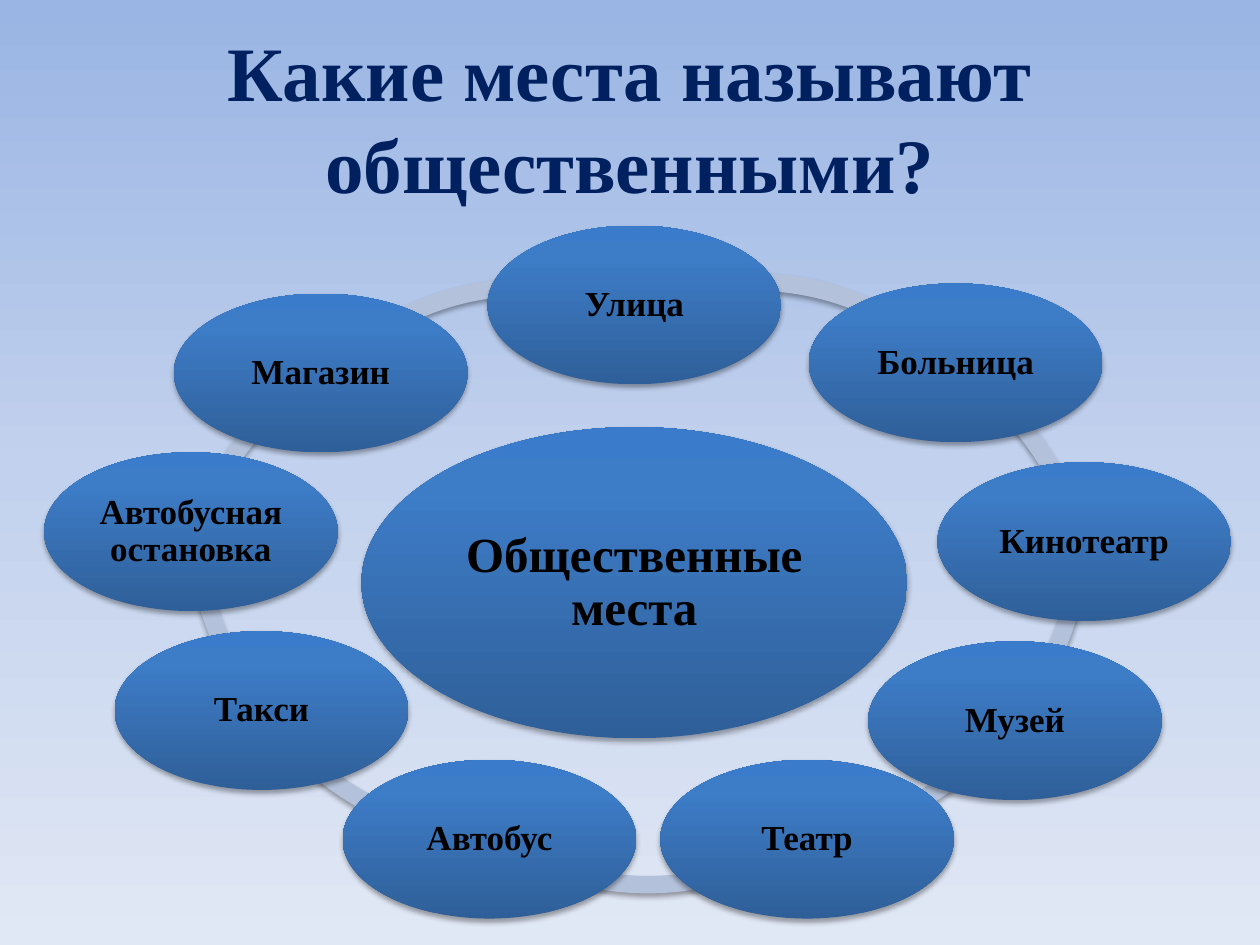
from lxml import etree
from pptx import Presentation
from pptx.dml.color import RGBColor
from pptx.enum.shapes import MSO_SHAPE
from pptx.enum.text import MSO_ANCHOR, PP_ALIGN
from pptx.oxml.ns import qn
from pptx.util import Pt

OVAL, BLOCK_ARC = MSO_SHAPE.OVAL, MSO_SHAPE.BLOCK_ARC
CENTER, MIDDLE = PP_ALIGN.CENTER, MSO_ANCHOR.MIDDLE
OVAL_STOPS = [(0, "2F5F99"), (80, "3D7CC7"), (100, "3A7CCB")]
PAGE_STOPS = [(0, "9AB5E4"), (50, "C2D1ED"), (100, "E1E8F5")]


def set_gradient(fill, element, stops, angle):
    """Give fill, held by element, stops of (percent, colour); angle is clockwise."""
    fill.gradient()
    gradient = next(element.iter(qn("a:gradFill")))
    stop_list = gradient.find(qn("a:gsLst"))
    for old_stop in list(stop_list):
        stop_list.remove(old_stop)
    for percent, color in stops:
        stop = etree.SubElement(stop_list, qn("a:gs"), pos=str(percent * 1000))
        etree.SubElement(stop, qn("a:srgbClr"), val=color)
    gradient.find(qn("a:lin")).set("ang", str(angle * 60000))


def write_text(shape, text, size, color, line_spacing=1.0, inset=None):
    frame = shape.text_frame
    frame.word_wrap = True
    frame.vertical_anchor = MIDDLE
    if inset is not None:
        frame.margin_left = frame.margin_right = Pt(inset)
        frame.margin_top = frame.margin_bottom = Pt(inset)
    para = frame.paragraphs[0]
    para.alignment = CENTER
    para.line_spacing = line_spacing
    span = para.add_run()
    span.text = text
    span.font.name = "Times New Roman"
    span.font.size = Pt(size)
    span.font.bold = True
    span.font.color.rgb = RGBColor.from_string(color)


deck = Presentation()
deck.slide_width, deck.slide_height = Pt(720), Pt(540)
page = deck.slides.add_slide(deck.slide_layouts[6])
set_gradient(page.background.fill, page._element, PAGE_STOPS, 90)

title = page.shapes.add_textbox(Pt(36), Pt(21.6), Pt(648), Pt(90))
write_text(title, "Какие места называют общественными?", 44, "002060")

# Ring segments between neighbouring places: left, top, start and end in degrees
ARC_SIZE = 322.6
arcs = [
    (139.7, 159.1, 222.32, 293.02),
    (99.4, 190.1, 197.51, 240.67),
    (107.3, 139.7, 138.6, 178.91),
    (121.7, 159.1, 91.36, 147.6),
    (208.8, 187.9, 55.19, 124.81),
    (288, 159.8, 34.69, 85.82),
    (299.5, 145.4, 1.1, 41.41),
    (303.1, 182.9, 300.83, 347.5),
    (270, 156.2, 244.5, 316.28),
]
diagram = []
for left, top, start, end in arcs:
    arc = page.shapes.add_shape(BLOCK_ARC, Pt(left), Pt(top), Pt(ARC_SIZE), Pt(ARC_SIZE))
    # Angles are stored in 60000ths of a degree, adjustments in 100000ths
    arc.adjustments[0] = start * 0.6
    arc.adjustments[1] = end * 0.6
    arc.adjustments[2] = 0.031
    arc.fill.solid()
    arc.fill.fore_color.rgb = RGBColor.from_string("B3C1DB")
    diagram.append(arc)

HUB = (311.8, 177.8, 28, 3)
PLACE = (167.8, 90.7, 20, 2)
ovals = [
    ("Общественные места", 206.6, 244.1, HUB),
    ("Улица", 278.6, 128.9, PLACE),
    ("Больница", 462.2, 162, PLACE),
    ("Кинотеатр", 535.7, 264.2, PLACE),
    ("Музей", 496.1, 366.5, PLACE),
    ("Театр", 377.3, 434.2, PLACE),
    ("Автобус", 195.8, 434.2, PLACE),
    ("Такси", 65.5, 360.7, PLACE),
    ("Автобусная остановка", 25.2, 258.5, PLACE),
    ("Магазин", 99.4, 167.8, PLACE),
]
for label, left, top, (width, height, size, inset) in ovals:
    oval = page.shapes.add_shape(OVAL, Pt(left), Pt(top), Pt(width), Pt(height))
    set_gradient(oval.fill, oval._element, OVAL_STOPS, 270)
    write_text(oval, label, size, "000000", line_spacing=0.9, inset=inset)
    diagram.append(oval)

for shape in diagram:
    shape.line.fill.background()
    shape.shadow.inherit = False
    effects = shape._element.spPr.find(qn("a:effectLst"))
    shadow = etree.SubElement(
        effects, qn("a:outerShdw"), blurRad=str(Pt(3.1)), dist=str(Pt(1.8)),
        dir=str(90 * 60000), rotWithShape="0")
    shadow_color = etree.SubElement(shadow, qn("a:srgbClr"), val="000000")
    etree.SubElement(shadow_color, qn("a:alpha"), val="35000")

deck.save("out.pptx")
